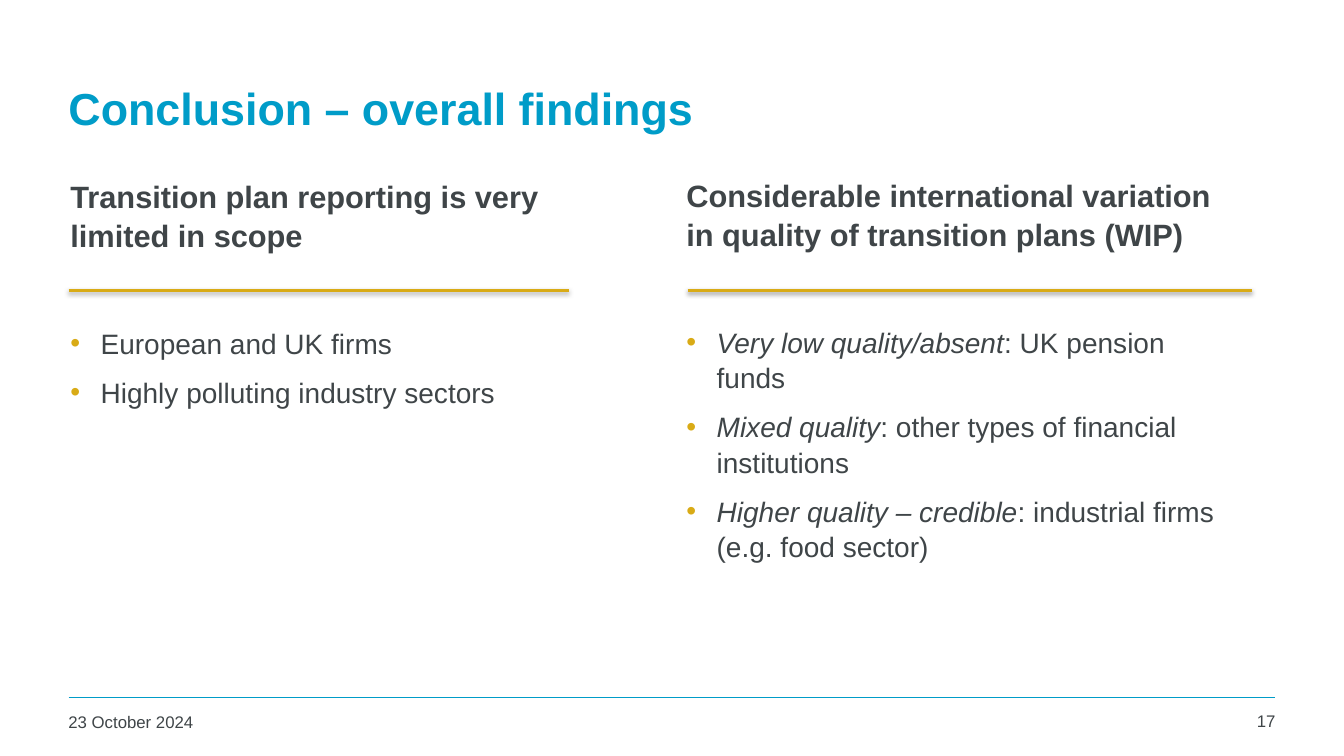
from lxml import etree
from pptx import Presentation
from pptx.dml.color import RGBColor
from pptx.enum import shapes, text
from pptx.oxml import ns
from pptx.util import Inches, Pt

BLUE = RGBColor(0x00, 0x9C, 0xC8)
GOLD = RGBColor(0xD9, 0xAB, 0x16)
SLATE = RGBColor(0x3F, 0x45, 0x48)
FONT = "Arial"
LINE_SPACING = 1.05
RULE_Y = 2.88

TITLE = "Conclusion – overall findings"
DATE = "23 October 2024"
PAGE_NUMBER = "17"
# Each finding is (italic lead, plain text)
COLUMNS = [
    {
        "box": (0.6, 1.7, 5.67, 5.07),
        "rule": (0.68, 5.64),
        "heading": "Transition plan reporting is very limited in scope",
        "findings": [
            ("", "European and UK firms"),
            ("", "Highly polluting industry sectors"),
        ],
    },
    {
        "box": (6.71, 1.69, 5.67, 4.76),
        "rule": (6.82, 12.42),
        "heading": "Considerable international variation in quality of "
                   "transition plans (WIP)",
        "findings": [
            ("Very low quality/absent", ": UK pension funds"),
            ("Mixed quality", ": other types of financial institutions"),
            ("Higher quality – credible", ": industrial firms (e.g. food sector)"),
        ],
    },
]


def add_element(parent, tag, **attributes):
    return etree.SubElement(parent, ns.qn(tag), attributes)


def add_box(page, left, top, width, height):
    box = page.shapes.add_textbox(*map(Inches, (left, top, width, height)))
    box.text_frame.word_wrap = True
    return box.text_frame


def add_span(para, words, size, color=SLATE, bold=False, italic=False):
    span = para.add_run()
    span.text = words
    span.font.name = FONT
    span.font.size = Pt(size)
    span.font.color.rgb = color
    span.font.bold = bold
    span.font.italic = italic


def add_rule(page, left, right, y, color, width):
    """Draw a horizontal line and return its empty effect list."""
    rule = page.shapes.add_connector(
        shapes.MSO_CONNECTOR.STRAIGHT, *map(Inches, (left, y, right, y)))
    rule.line.color.rgb = color
    rule.line.width = Pt(width)
    return add_element(rule._element.spPr, "a:effectLst")


def add_shadow(effects):
    shadow = add_element(effects, "a:outerShdw", blurRad=str(Pt(3.1)),
                         dist=str(Pt(1.6)), dir="5400000", rotWithShape="0")
    color = add_element(shadow, "a:srgbClr", val="000000")
    add_element(color, "a:alpha", val="38000")


def add_bullet(para):
    props = para._p.get_or_add_pPr()
    props.set("marL", str(Inches(0.3)))
    props.set("indent", str(Inches(-0.3)))
    color = add_element(props, "a:buClr")
    add_element(color, "a:srgbClr", val=str(GOLD))
    add_element(props, "a:buFont", typeface=FONT)
    add_element(props, "a:buChar", char="•")


def add_column(page, column):
    frame = add_box(page, *column["box"])
    frame.margin_right = Inches(0.15)
    heading = frame.paragraphs[0]
    heading.line_spacing = LINE_SPACING
    add_span(heading, column["heading"], 22, bold=True)
    for index, (lead, rest) in enumerate(column["findings"]):
        para = frame.add_paragraph()
        add_bullet(para)
        para.line_spacing = LINE_SPACING
        # The first finding clears the gold rule under the heading
        para.space_before = Pt(10 if index else 50.5)
        if lead:
            add_span(para, lead, 20, italic=True)
        add_span(para, rest, 20)
    add_shadow(add_rule(page, *column["rule"], RULE_Y, GOLD, 2))


def main():
    deck = Presentation()
    deck.slide_width, deck.slide_height = Inches(13.33), Inches(7.5)
    page = deck.slides.add_slide(deck.slide_layouts[6])

    add_rule(page, 0.68, 12.65, 6.92, BLUE, 1)
    title = add_box(page, 0.58, 0.44, 12.09, 1.25)
    title.vertical_anchor = text.MSO_ANCHOR.MIDDLE
    add_span(title.paragraphs[0], TITLE, 32, BLUE, bold=True)

    for column in COLUMNS:
        add_column(page, column)

    date = add_box(page, 0.58, 7.01, 2.94, 0.36)
    add_span(date.paragraphs[0], DATE, 12)
    number = add_box(page, 11.81, 7, 0.94, 0.37).paragraphs[0]
    number.alignment = text.PP_ALIGN.RIGHT
    add_span(number, PAGE_NUMBER, 12)

    deck.save("out.pptx")


if __name__ == "__main__":
    main()
